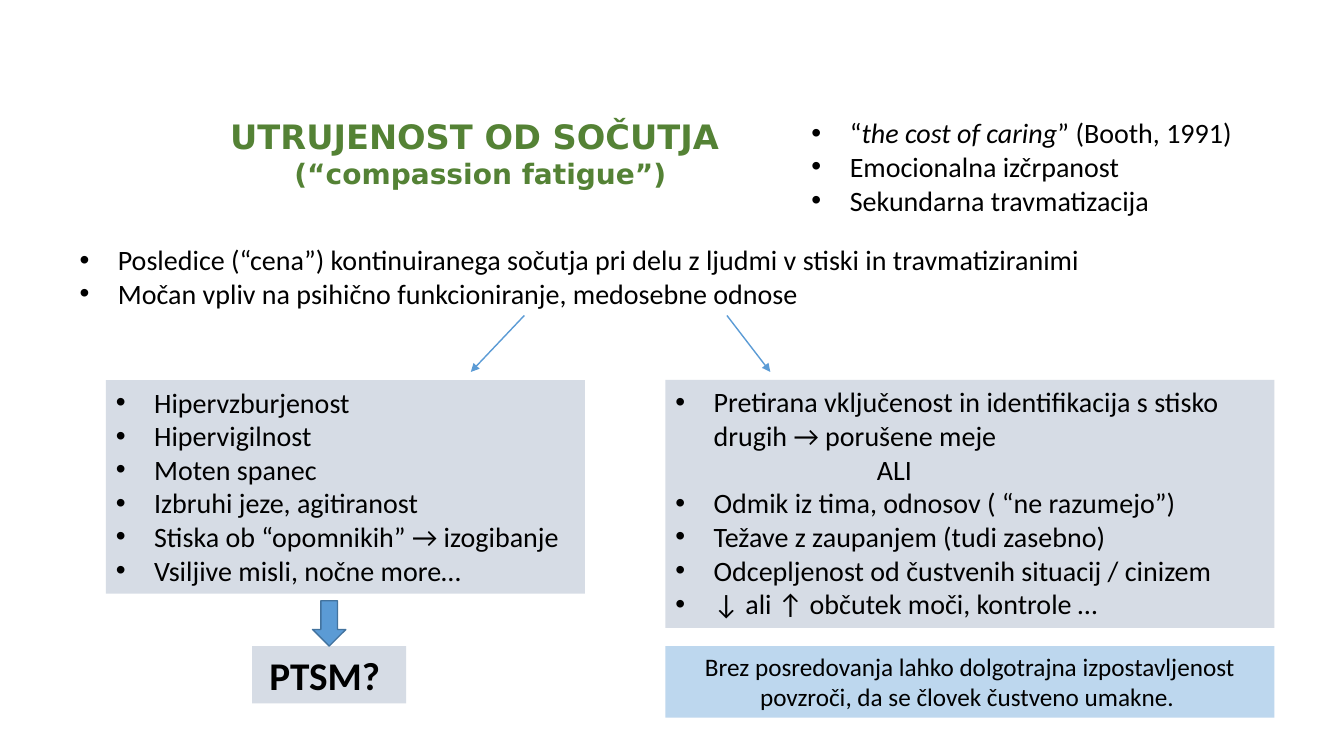
"""Build the slide on compassion fatigue and its consequences."""
from lxml import etree
from pptx import Presentation
from pptx.dml.color import RGBColor
from pptx.enum.shapes import MSO_CONNECTOR, MSO_SHAPE
from pptx.enum.text import MSO_AUTO_SIZE, PP_ALIGN
from pptx.oxml.ns import qn
from pptx.util import Inches, Pt

CENTER, LEFT = PP_ALIGN.CENTER, PP_ALIGN.LEFT
STRAIGHT, DOWN_ARROW = MSO_CONNECTOR.STRAIGHT, MSO_SHAPE.DOWN_ARROW
GROW = MSO_AUTO_SIZE.SHAPE_TO_FIT_TEXT

BLACK, GREEN, GREY, PALE_BLUE = "000000", "548235", "D6DCE5", "BDD7EE"
BLUE, DARK_BLUE = "5B9BD5", "43739E"
HANGING = 0.38
ALI_INDENT = 2.0
LEFT_X, RIGHT_X, RIGHT_W = 1.05, 6.6, 6.04
TOP_Y, LISTS_Y, OUTCOME_Y = 1.1, 3.77, 6.41
ARROW_Y = (3.13, 3.69)

TITLE = [("UTRUJENOST OD SOČUTJA ", 24), ("(“compassion fatigue”)", 20)]
DEFINITION = [
    ["“", ("the cost of caring", True), "” (Booth, 1991)"],
    "Emocionalna izčrpanost",
    "Sekundarna travmatizacija",
]
CONSEQUENCES = [
    "Posledice (“cena”) kontinuiranega sočutja pri delu z ljudmi v stiski in travmatiziranimi",
    "Močan vpliv na psihično funkcioniranje, medosebne odnose",
]
SYMPTOMS = [
    "Hipervzburjenost",
    "Hipervigilnost",
    "Moten spanec",
    "Izbruhi jeze, agitiranost",
    "Stiska ob “opomnikih” → izogibanje",
    "Vsiljive misli, nočne more…",
]
RELATIONS = [
    "Pretirana vključenost in identifikacija s stisko drugih → porušene meje",
    "ALI",
    "Odmik iz tima, odnosov ( “ne razumejo”)",
    "Težave z zaupanjem (tudi zasebno)",
    "Odcepljenost od čustvenih situacij / cinizem",
    "↓ ali ↑ občutek moči, kontrole …",
]
PTSM = [("PTSM? ", 28)]
WARNING = [("Brez posredovanja lahko dolgotrajna izpostavljenost povzroči, "
            "da se človek čustveno umakne. ", 18)]
BODY = {"name": "Calibri", "size": Pt(20), "bold": False}
STRONG = {"name": "Calibri", "bold": True}
HEADING = {"name": "DejaVu Sans", "bold": True}

BULLET_LISTS = [
    (CONSEQUENCES, (0.69, 2.36, 10.88, 0.77), None),
    (RELATIONS, (RIGHT_X, LISTS_Y, RIGHT_W, 2.46), GREY),
    (SYMPTOMS, (LEFT_X, LISTS_Y, 4.75, 2.12), GREY),
    (DEFINITION, (7.95, TOP_Y, 4.68, 1.11), None),
]
CENTERED = [
    (TITLE, (1.57, TOP_Y, 6.39, 0.84), None, HEADING, GREEN),
    (PTSM, (2.5, OUTCOME_Y, 1.53, 0.57), GREY, STRONG, BLACK),
    (WARNING, (RIGHT_X, OUTCOME_Y, RIGHT_W, 0.71), PALE_BLUE, BODY, BLACK),
]
BRANCHES = [(5.2, 4.67), (7.21, 7.64)]


def rgb(value):
    return RGBColor.from_string(value)


def add_box(s, place, fill):
    sp = s.shapes.add_textbox(*map(Inches, place))
    if fill:
        sp.fill.solid()
        sp.fill.fore_color.rgb = rgb(fill)
    tf = sp.text_frame
    tf.word_wrap, tf.auto_size = True, GROW
    return tf


def add_paragraph(tf, index, align):
    p = tf.paragraphs[0] if index == 0 else tf.add_paragraph()
    p.alignment = align
    return p


def add_run(p, text, formats, color):
    r = p.add_run()
    r.text = text
    for key, value in formats.items():
        setattr(r.font, key, value)
    r.font.color.rgb = rgb(color)


def indent(p, bullet):
    pPr = p._p.get_or_add_pPr()
    pPr.set("marL", str(Inches(HANGING if bullet else ALI_INDENT)))
    pPr.set("indent", str(Inches(-HANGING if bullet else 0)))
    if bullet:
        etree.SubElement(pPr, qn("a:buFont")).set("typeface", "Arial")
        etree.SubElement(pPr, qn("a:buChar")).set("char", "•")


def add_bullets(s, items, place, fill):
    tf = add_box(s, place, fill)
    for i, item in enumerate(items):
        p = add_paragraph(tf, i, LEFT)
        indent(p, item != "ALI")
        for part in item if isinstance(item, list) else [item]:
            text, italic = part if isinstance(part, tuple) else (part, False)
            add_run(p, text, {**BODY, "italic": italic}, BLACK)


def add_centered(s, lines, place, fill, formats, color):
    tf = add_box(s, place, fill)
    for i, (text, size) in enumerate(lines):
        add_run(add_paragraph(tf, i, CENTER), text, {**formats, "size": Pt(size)}, color)


def add_branch(s, x1, x2):
    y1, y2 = ARROW_Y
    line = s.shapes.add_connector(STRAIGHT, *map(Inches, (x1, y1, x2, y2)))
    line.line.color.rgb, line.line.width = rgb(BLUE), Pt(1)
    etree.SubElement(line.line._get_or_add_ln(), qn("a:tailEnd")).set("type", "triangle")
    etree.SubElement(line._element.spPr, qn("a:effectLst"))


def add_down_arrow(s):
    sp = s.shapes.add_shape(DOWN_ARROW, *map(Inches, (3.1, 5.96, 0.33, 0.45)))
    sp.shadow.inherit = False
    sp.fill.solid()
    sp.fill.fore_color.rgb = rgb(BLUE)
    sp.line.color.rgb, sp.line.width = rgb(DARK_BLUE), Pt(1)


def main():
    prs = Presentation()
    prs.slide_width, prs.slide_height = Inches(13.33), Inches(7.5)
    s = prs.slides.add_slide(prs.slide_layouts[6])
    for box in CENTERED:
        add_centered(s, *box)
    for box in BULLET_LISTS:
        add_bullets(s, *box)
    add_down_arrow(s)
    for branch in BRANCHES:
        add_branch(s, *branch)
    prs.save("out.pptx")


if __name__ == "__main__":
    main()
